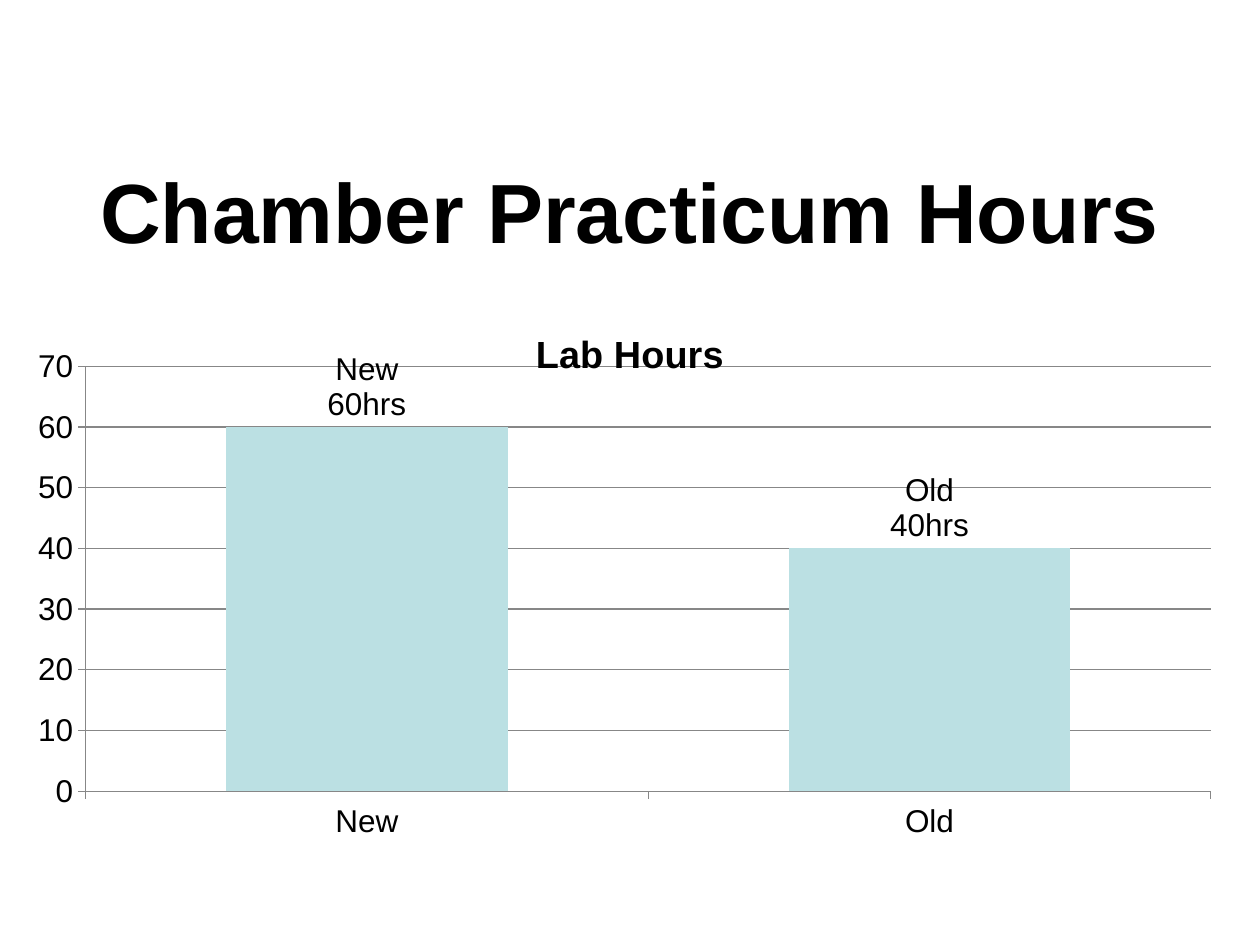
from dataclasses import dataclass

from lxml.etree import SubElement
from pptx import Presentation
from pptx.chart.chart import Chart
from pptx.chart.data import CategoryChartData
from pptx.dml.color import RGBColor
from pptx.enum.chart import XL_CHART_TYPE, XL_LABEL_POSITION, XL_TICK_MARK
from pptx.enum.text import MSO_ANCHOR, PP_ALIGN
from pptx.oxml.ns import qn
from pptx.slide import Slide
from pptx.text.text import Font
from pptx.util import Pt


@dataclass(frozen=True)
class Theme:
    font: str = "Arial"
    ink: RGBColor = RGBColor(0x00, 0x00, 0x00)
    bar: RGBColor = RGBColor(0xBB, 0xE0, 0xE3)
    rule: RGBColor = RGBColor(0x87, 0x87, 0x87)
    title_size: float = 48
    chart_title_size: float = 21.6
    chart_size: float = 18


@dataclass(frozen=True)
class Course:
    name: str
    hours: int


THEME = Theme()
COURSES = [Course("New", 60), Course("Old", 40)]
LEFT, WIDTH = Pt(12), Pt(696)
PLOT_AREA = {"x": 0.053, "y": 0.107, "w": 0.924, "h": 0.736}


def style_font(font: Font, size: float, bold: bool = False) -> None:
    font.name = THEME.font
    font.size = Pt(size)
    font.bold = bold
    font.color.rgb = THEME.ink


def add_title(page: Slide, text: str) -> None:
    box = page.shapes.add_textbox(LEFT, Pt(84), WIDTH, Pt(72))
    frame = box.text_frame
    frame.word_wrap = True
    frame.vertical_anchor = MSO_ANCHOR.MIDDLE
    para = frame.paragraphs[0]
    para.text = text
    para.alignment = PP_ALIGN.CENTER
    style_font(para.font, THEME.title_size, bold=True)


def place_plot(chart: Chart) -> None:
    """Fix the inner plot area as fractions of the chart frame."""
    plot_area = chart.plots[0]._element.getparent()
    layout = plot_area.find(qn("c:layout"))
    if layout is None:
        layout = SubElement(plot_area, qn("c:layout"))
        plot_area.insert(0, layout)
    manual = SubElement(layout, qn("c:manualLayout"))
    settings = {"layoutTarget": "inner", "xMode": "edge", "yMode": "edge", **PLOT_AREA}
    for tag, value in settings.items():
        SubElement(manual, qn(f"c:{tag}")).set("val", str(value))


def style_axes(chart: Chart) -> None:
    value_axis = chart.value_axis
    value_axis.minimum_scale, value_axis.maximum_scale = 0, 70
    value_axis.major_unit = 10
    value_axis.has_major_gridlines = True
    for axis in (chart.category_axis, value_axis):
        axis.major_tick_mark = XL_TICK_MARK.OUTSIDE
        axis.minor_tick_mark = XL_TICK_MARK.NONE
        style_font(axis.tick_labels.font, THEME.chart_size)
    for rule in (chart.category_axis, value_axis, value_axis.major_gridlines):
        rule.format.line.color.rgb = THEME.rule
        rule.format.line.width = Pt(0.75)


def label_bars(chart: Chart) -> None:
    series = chart.plots[0].series[0]
    labels = series.data_labels
    labels.show_value = labels.show_category_name = True
    labels.position = XL_LABEL_POSITION.OUTSIDE_END
    style_font(labels.font, THEME.chart_size)
    for index, course in enumerate(COURSES):
        label = series.points[index].data_label
        label.text_frame.text = f"{course.name}\n{course.hours}hrs"
        label.position = XL_LABEL_POSITION.OUTSIDE_END
        for para in label.text_frame.paragraphs:
            for span in para.runs:
                style_font(span.font, THEME.chart_size)


def add_hours_chart(page: Slide) -> None:
    data = CategoryChartData()
    data.categories = [course.name for course in COURSES]
    data.add_series("Series 1", [course.hours for course in COURSES])
    chart = page.shapes.add_chart(
        XL_CHART_TYPE.COLUMN_CLUSTERED, LEFT, Pt(174), WIDTH, Pt(330), data
    ).chart
    style_font(chart.font, THEME.chart_size)
    chart.has_legend = False
    chart.has_title = True
    heading = chart.chart_title.text_frame
    heading.text = "Lab Hours"
    style_font(heading.paragraphs[0].runs[0].font, THEME.chart_title_size, bold=True)

    plot = chart.plots[0]
    plot.gap_width = 100
    plot.vary_by_categories = False
    fill = plot.series[0].format.fill
    fill.solid()
    fill.fore_color.rgb = THEME.bar
    place_plot(chart)
    style_axes(chart)
    label_bars(chart)


def main() -> None:
    deck = Presentation()
    deck.slide_width, deck.slide_height = Pt(720), Pt(540)
    page = deck.slides.add_slide(deck.slide_layouts[6])
    add_title(page, "Chamber Practicum Hours")
    add_hours_chart(page)
    deck.save("out.pptx")


if __name__ == "__main__":
    main()
